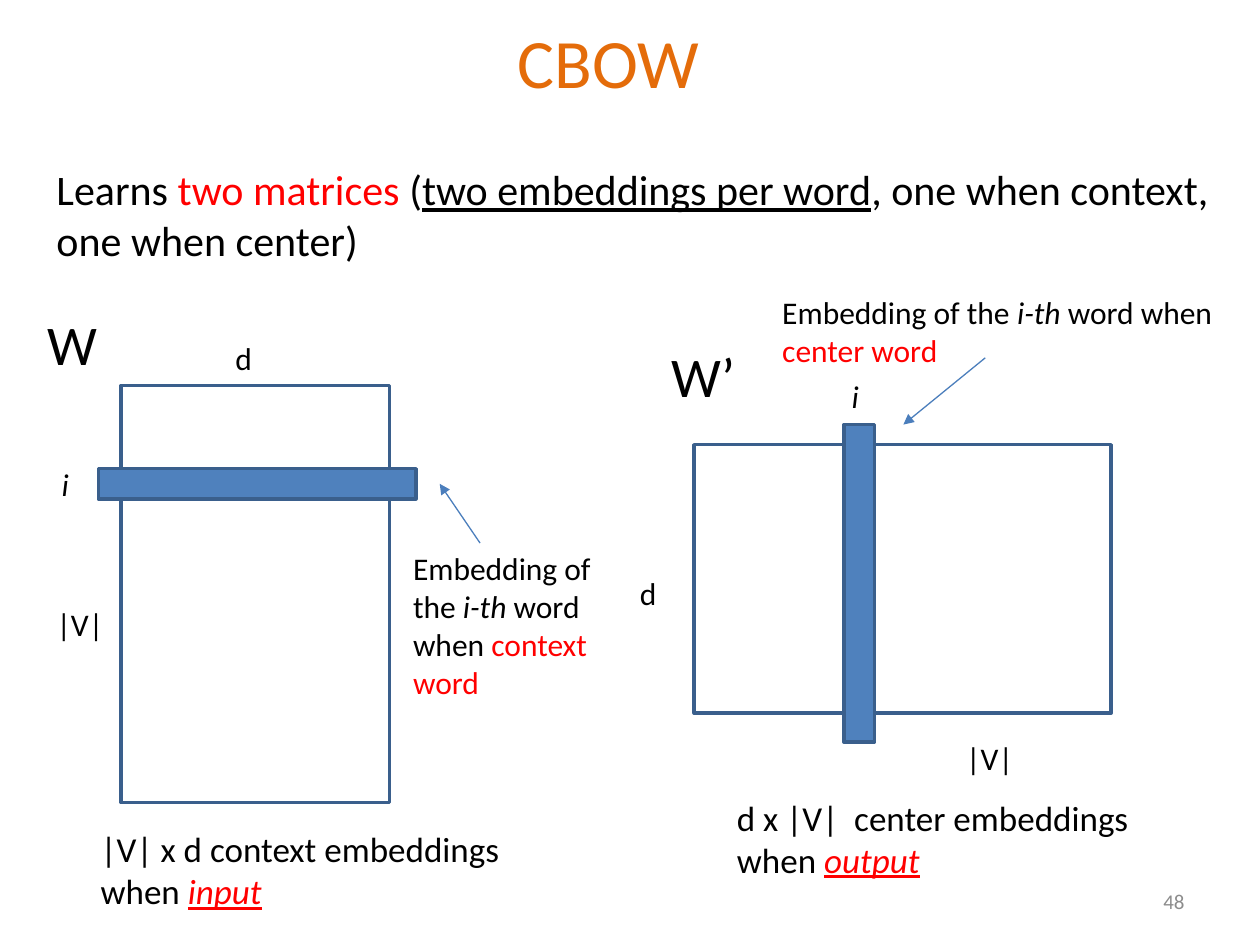
import pptx
import pptx.dml.color
import pptx.enum.shapes
import pptx.enum.text
import pptx.oxml.ns
import pptx.util
import lxml.etree

Inches = pptx.util.Inches
ALIGN = pptx.enum.text.PP_ALIGN
ANCHOR = pptx.enum.text.MSO_ANCHOR

THEME = {
    "font": "Calibri",
    "colors": {
        "title": "E46C0A", "text": "000000", "accent": "FF0000",
        "number": "8C8C8C", "bar": "4F81BD", "outline": "3A5F8C",
        "arrow": "4B7EBC",
    },
    "sizes": {"title": 39.6, "matrix": 32, "lead": 24, "caption": 20,
              "label": 18, "number": 12},
    "outline_width": 2,
    "arrow_width": 0.75,
}

PLAIN = {}
ACCENT = {"color": "accent"}
ITALIC = {"italic": True}
UNDERLINE = {"underline": True}
KEYWORD = ACCENT | ITALIC | UNDERLINE


def embedding_note(role):
    return [[("Embedding of the ", PLAIN), ("i-th", ITALIC),
             (" word when ", PLAIN), (role, ACCENT)]]


def caption(first_line, keyword):
    return [[(first_line, PLAIN)], [("when ", PLAIN), (keyword, KEYWORD)]]


def label(words, style=PLAIN):
    return [[(words, style)]]


MATRIX_SIZE = (3.31, 2.13)
BAR_SIZE = (0.24, 2.52)
MATRICES = [
    {"matrix": (5.51, 3.53), "bar": (6.7, 3.37), "rotation": 0},
    {"matrix": (0.37, 3.65), "bar": (1.92, 2.58), "rotation": 90},
]

ARROWS = [((3.81, 4.31), (3.49, 3.84)), ((7.82, 2.84), (7.17, 3.37))]

CENTERED = {"align": ALIGN.CENTER, "anchor": ANCHOR.MIDDLE}
RIGHT = {"align": ALIGN.RIGHT, "anchor": ANCHOR.MIDDLE}

TEXTS = [
    ((0.33, 0.18, 9, 0.61), "title", label("CBOW", {"color": "title"}), CENTERED),
    ((7.17, 6.95, 2.33, 0.4), "number", label("48", {"color": "number"}), RIGHT),
    ((0.35, 1.25, 9.4, 0.91), "lead",
     [[("Learns ", PLAIN), ("two matrices ", ACCENT), ("(", PLAIN),
       ("two embeddings per word", UNDERLINE),
       (", one when context, one when center)", PLAIN)]], {}),
    ((0.28, 2.41, 0.94, 0.64), "matrix", label("W"), {}),
    ((1.77, 2.64, 0.3, 0.4), "label", label("d"), {}),
    ((0.39, 3.64, 0.31, 0.4), "label", label("i", ITALIC), {}),
    ((0.35, 4.75, 0.79, 0.4), "label", label("|V|"), {}),
    ((3.18, 4.31, 1.9, 1.31), "label", embedding_note("context word"), {}),
    ((0.7, 6.52, 4.22, 0.77), "caption",
     caption("|V| x d context embeddings", "input"), {}),
    ((5.23, 2.66, 0.94, 0.64), "matrix", label("W’"), {}),
    ((4.98, 4.51, 0.3, 0.4), "label", label("d"), {}),
    ((6.66, 2.94, 0.31, 0.4), "label", label("i", ITALIC), {}),
    ((7.57, 5.82, 0.79, 0.4), "label", label("|V|"), {}),
    ((6.11, 2.28, 3.75, 0.71), "label", embedding_note("center word"), {}),
    ((5.75, 6.27, 3.82, 0.77), "caption",
     caption("d x |V|  center embeddings", "output"), {}),
]


def color(name):
    return pptx.dml.color.RGBColor.from_string(THEME["colors"][name])


def apply(target, values):
    for name, value in values.items():
        setattr(target, name, value)


def add_text(page, place, size, paragraphs, layout):
    box = page.shapes.add_textbox(*map(Inches, place))
    frame = box.text_frame
    apply(frame, {"word_wrap": True,
                  "vertical_anchor": layout.get("anchor", ANCHOR.TOP)})
    for index, spans in enumerate(paragraphs):
        para = frame.add_paragraph() if index else frame.paragraphs[0]
        para.alignment = layout.get("align", ALIGN.LEFT)
        for words, style in spans:
            span = para.add_run()
            span.text = words
            apply(span.font, {
                "name": THEME["font"],
                "size": pptx.util.Pt(THEME["sizes"][size]),
                "italic": style.get("italic", False),
                "underline": style.get("underline", False),
            })
            span.font.color.rgb = color(style.get("color", "text"))


def add_rectangle(page, corner, size, rotation, fill=None):
    box = page.shapes.add_shape(pptx.enum.shapes.MSO_SHAPE.RECTANGLE,
                                *map(Inches, corner + size))
    box.rotation = rotation
    box.shadow.inherit = False
    if fill:
        box.fill.solid()
        box.fill.fore_color.rgb = color(fill)
    else:
        box.fill.background()
    box.line.color.rgb = color("outline")
    box.line.width = pptx.util.Pt(THEME["outline_width"])


def add_arrow(page, start, end):
    arrow = page.shapes.add_connector(pptx.enum.shapes.MSO_CONNECTOR.STRAIGHT,
                                      *map(Inches, start + end))
    arrow.line.color.rgb = color("arrow")
    arrow.line.width = pptx.util.Pt(THEME["arrow_width"])
    qn = pptx.oxml.ns.qn
    properties = arrow.element.spPr
    lxml.etree.SubElement(properties.find(qn("a:ln")), qn("a:tailEnd"),
                          type="triangle")
    lxml.etree.SubElement(properties, qn("a:effectLst"))


def main():
    deck = pptx.Presentation()
    apply(deck, {"slide_width": Inches(10), "slide_height": Inches(7.5)})
    page = deck.slides.add_slide(deck.slide_layouts[6])
    for item in MATRICES:
        add_rectangle(page, item["matrix"], MATRIX_SIZE, item["rotation"])
        add_rectangle(page, item["bar"], BAR_SIZE, item["rotation"], "bar")
    for start, end in ARROWS:
        add_arrow(page, start, end)
    for text in TEXTS:
        add_text(page, *text)
    deck.save("out.pptx")


if __name__ == "__main__":
    main()
